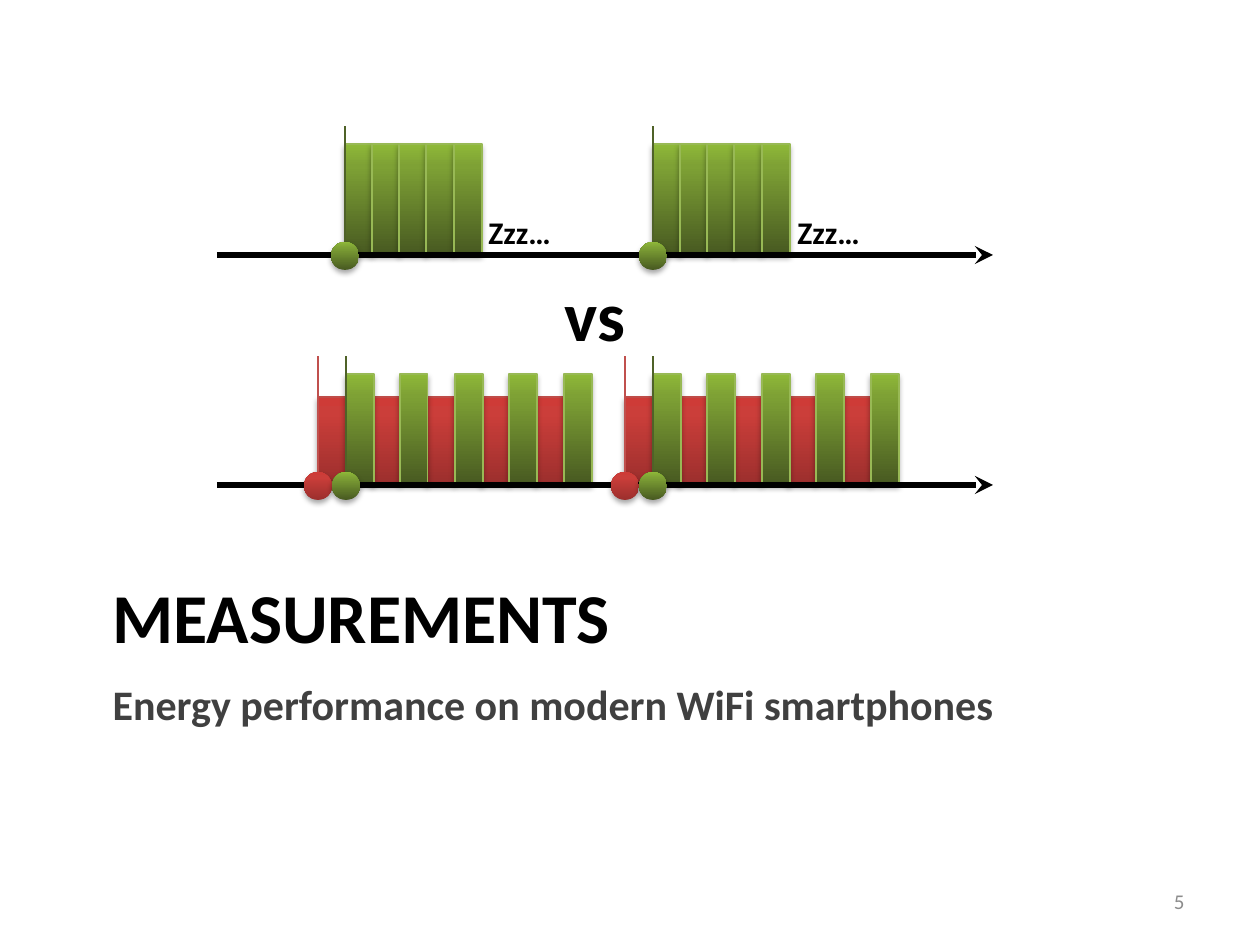
from dataclasses import dataclass

import lxml.etree
import pptx
import pptx.dml.color
import pptx.enum.shapes
import pptx.enum.text
import pptx.oxml.ns
import pptx.util

RGB = pptx.dml.color.RGBColor
SHAPE = pptx.enum.shapes.MSO_SHAPE
ALIGN = pptx.enum.text.PP_ALIGN
ANCHOR = pptx.enum.text.MSO_ANCHOR
qn = pptx.oxml.ns.qn

SCALE = 914400 / 126
FONT = "Calibri"
BLACK = RGB(0x00, 0x00, 0x00)
DARK = RGB(0x40, 0x40, 0x40)
GREY = RGB(0x8C, 0x8C, 0x8C)


@dataclass(frozen=True)
class Tone:
    stops: tuple[tuple[int, RGB], ...]
    edge: RGB
    mark: RGB
    tall: int


GREEN = Tone(
    ((0, RGB(0x48, 0x5A, 0x21)), (80, RGB(0x7E, 0xA1, 0x35)), (100, RGB(0x8F, 0xB9, 0x38))),
    RGB(0x98, 0xB9, 0x55), RGB(0x4F, 0x62, 0x28), 110,
)
RED = Tone(
    ((0, RGB(0x9C, 0x2F, 0x2D)), (80, RGB(0xCB, 0x3E, 0x3A)), (100, RGB(0xCE, 0x3B, 0x37))),
    RGB(0xBF, 0x4C, 0x48), RGB(0xC0, 0x50, 0x4D), 87,
)


@dataclass(frozen=True)
class Burst:
    tone: Tone
    left: int
    step: int


@dataclass(frozen=True)
class Track:
    axis: int
    bursts: tuple[Burst, ...]
    naps: tuple[int, ...] = ()


TRACKS = (
    Track(255, (Burst(GREEN, 345, 1), Burst(GREEN, 653, 1)), (785, 476)),
    Track(485, (
        Burst(RED, 318, 2), Burst(RED, 625, 2),
        Burst(GREEN, 346, 2), Burst(GREEN, 653, 2),
    )),
)
BARS = 5
WIDE = 28
DOT = 28


def emu(px: int) -> int:
    return round(px * SCALE)


def place(shape, left: int, top: int, width: int, height: int) -> None:
    shape.left, shape.top = emu(left), emu(top)
    shape.width, shape.height = emu(width), emu(height)


def write(shape, text: str, *, size: int, color: RGB = BLACK, bold: bool = True,
          wrap: bool = True, align=ALIGN.LEFT, anchor=ANCHOR.TOP) -> None:
    frame = shape.text_frame
    frame.word_wrap = wrap
    frame.vertical_anchor = anchor
    para = frame.paragraphs[0]
    para.alignment = align
    run = para.add_run()
    run.text = text
    run.font.name = FONT
    run.font.size = pptx.util.Pt(size)
    run.font.bold = bold
    run.font.color.rgb = color


def add_text(shapes, box: tuple[int, int, int, int], text: str, **form) -> None:
    write(shapes.add_textbox(*map(emu, box)), text, **form)


def add_node(parent, tag: str, **attrs: str):
    return lxml.etree.SubElement(parent, qn(tag), attrs)


def add_block(shapes, kind, box: tuple[int, int, int, int], tone: Tone):
    block = shapes.add_shape(kind, *map(emu, box))
    block.fill.gradient()
    block.fill.gradient_angle = 90
    props = block._element.spPr
    stops = props.find(qn("a:gradFill")).find(qn("a:gsLst"))
    stops.clear()
    for spot, color in tone.stops:
        stop = add_node(stops, "a:gs", pos=str(spot * 1000))
        add_node(stop, "a:srgbClr", val=str(color))
    block.line.fill.background()
    block.shadow.inherit = False
    shade = add_node(
        props.find(qn("a:effectLst")), "a:outerShdw",
        blurRad=str(pptx.util.Pt(3.1)), dist=str(pptx.util.Pt(1.8)),
        dir="5400000", rotWithShape="0",
    )
    add_node(add_node(shade, "a:srgbClr", val=str(BLACK)), "a:alpha", val="35000")
    return block


def add_line(shapes, start: tuple[int, int], end: tuple[int, int],
             color: RGB, width: float, arrow: bool = False) -> None:
    line = shapes.add_connector(
        pptx.enum.shapes.MSO_CONNECTOR.STRAIGHT, *map(emu, start + end))
    line.line.color.rgb = color
    line.line.width = pptx.util.Pt(width)
    props = line._element.spPr
    if arrow:
        add_node(props.find(qn("a:ln")), "a:tailEnd", type="stealth")
    add_node(props, "a:effectLst")


def add_bars(shapes, burst: Burst, axis: int) -> None:
    tone = burst.tone
    for i in range(BARS):
        left = burst.left + 109 * i * burst.step // 4
        box = (left, axis - 1 - tone.tall, WIDE, tone.tall)
        bar = add_block(shapes, SHAPE.RECTANGLE, box, tone)
        bar.line.color.rgb = tone.edge
        bar.line.width = pptx.util.Pt(0.75)


def add_mark(shapes, burst: Burst, axis: int) -> None:
    x = burst.left
    add_line(shapes, (x, axis + 3), (x, axis - 129), burst.tone.mark, 1.5)
    add_block(shapes, SHAPE.OVAL, (x - DOT // 2, axis - 13, DOT, DOT), burst.tone)


def add_track(slide, track: Track) -> None:
    shapes = slide.shapes.add_group_shape().shapes
    for burst in track.bursts:
        add_bars(shapes, burst, track.axis)
    add_line(shapes, (217, track.axis), (993, track.axis), BLACK, 3.5, arrow=True)
    for burst in track.bursts:
        add_mark(shapes, burst, track.axis)
    for left in track.naps:
        add_text(shapes, (left, track.axis - 48, 88, 50), "Zzz…", size=18, wrap=False)


def main() -> None:
    deck = pptx.Presentation()
    deck.slide_width, deck.slide_height = emu(1260), emu(945)
    slide = deck.slides.add_slide(deck.slide_layouts[2])
    title, body = slide.placeholders
    place(title, 100, 567, 1071, 103)
    write(title, "MEASUREMENTS", size=40)
    place(body, 100, 672, 1071, 63)
    write(body, "Energy performance on modern WiFi smartphones",
          size=24, color=DARK, anchor=ANCHOR.BOTTOM)
    add_text(slide.shapes, (903, 876, 294, 50), "5", size=12, color=GREY,
             bold=False, align=ALIGN.RIGHT, anchor=ANCHOR.MIDDLE)
    for track in TRACKS:
        add_track(slide, track)
    add_text(slide.shapes, (552, 265, 87, 97), "vs", size=40, wrap=False)
    deck.save("out.pptx")


if __name__ == "__main__":
    main()
